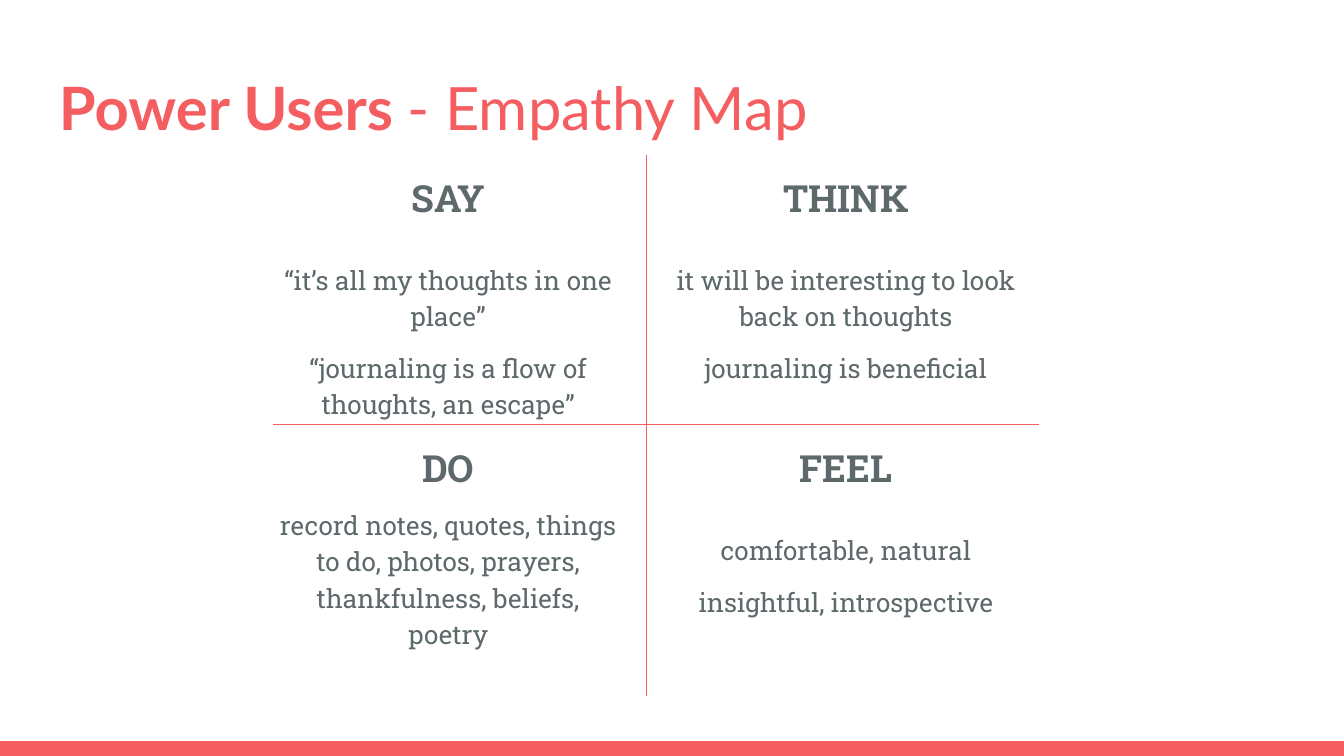
"""Build the empathy map slide for power users."""
import pptx
import pptx.util
import pptx.dml.color
import pptx.enum.shapes
import pptx.enum.text
import pptx.oxml.ns
from lxml import etree

Inches, Pt = pptx.util.Inches, pptx.util.Pt

RED, GREY = "F55E61", "5E696C"
TITLE = [("Power Users ", True), ("- Empathy Map", False)]
QUADS = [
    ("SAY", 21.6, ["“it’s all my thoughts in one place”",
                   "“journaling is a flow of thoughts, an escape”"]),
    ("THINK", 21.6, ["it will be interesting to look back on thoughts",
                     "journaling is beneficial"]),
    ("DO", 8.3, ["record notes, quotes, things to do, photos, prayers, "
                 "thankfulness, beliefs, poetry"]),
    ("FEEL", 21.6, ["comfortable, natural", "insightful, introspective"]),
]
GAP = 8.3
LEFT, TOP, WIDE, HIGH, STEP = 1.94, 1.15, 2.79, 2.01, 2.96
AXES = [(4.81, TOP, 4.81, 5.18), (7.73, 3.16, 2.03, 3.16)]


def color(code):
    return pptx.dml.color.RGBColor.from_string(code)


def style(run, face, size, code, bold):
    run.font.name = face
    run.font.size = Pt(size)
    run.font.bold = bold
    run.font.color.rgb = color(code)


def add_frame(slide, *place):
    frame = slide.shapes.add_textbox(*map(Inches, place)).text_frame
    frame.word_wrap = True
    frame.margin_left = frame.margin_right = Inches(0.1)
    frame.margin_top = frame.margin_bottom = Inches(0.1)
    return frame


def add_quad(slide, index, head, lead, notes):
    row, col = divmod(index, 2)
    frame = add_frame(slide, LEFT + col * STEP, TOP + row * HIGH, WIDE, HIGH)
    frame.text = "\n".join([head] + notes)
    for rank, para in enumerate(frame.paragraphs):
        para.alignment = pptx.enum.text.PP_ALIGN.CENTER
        para.line_spacing = 1.15
        para.space_before = Pt((0, lead, GAP)[rank])
        style(para.runs[0], "Roboto Slab", 14 if rank else 20, GREY, rank == 0)


def add_axis(slide, ends):
    kind = pptx.enum.shapes.MSO_CONNECTOR.STRAIGHT
    axis = slide.shapes.add_connector(kind, *map(Inches, ends))
    axis.line.color.rgb = color(RED)
    axis.line.width = Pt(0.75)
    props = axis.element.spPr
    etree.SubElement(props, pptx.oxml.ns.qn("a:effectLst"))


def main():
    deck = pptx.Presentation()
    deck.slide_width = Inches(10)
    deck.slide_height = deck.slide_width * 9 // 16
    slide = deck.slides.add_slide(deck.slide_layouts[6])

    rect = pptx.enum.shapes.MSO_SHAPE.RECTANGLE
    deep = Inches(0.11)
    band = slide.shapes.add_shape(
        rect, 0, deck.slide_height - deep, deck.slide_width, deep)
    band.shadow.inherit = False
    band.fill.solid()
    band.fill.fore_color.rgb = color(RED)
    band.line.fill.background()

    title = add_frame(slide, 0.34, 0.43, 9.32, 0.68).paragraphs[0]
    for text, bold in TITLE:
        run = title.add_run()
        run.text = text
        style(run, "Lato", 32, RED, bold)

    for index, quad in enumerate(QUADS):
        add_quad(slide, index, *quad)
    for ends in AXES:
        add_axis(slide, ends)
    deck.save("out.pptx")


if __name__ == "__main__":
    main()
